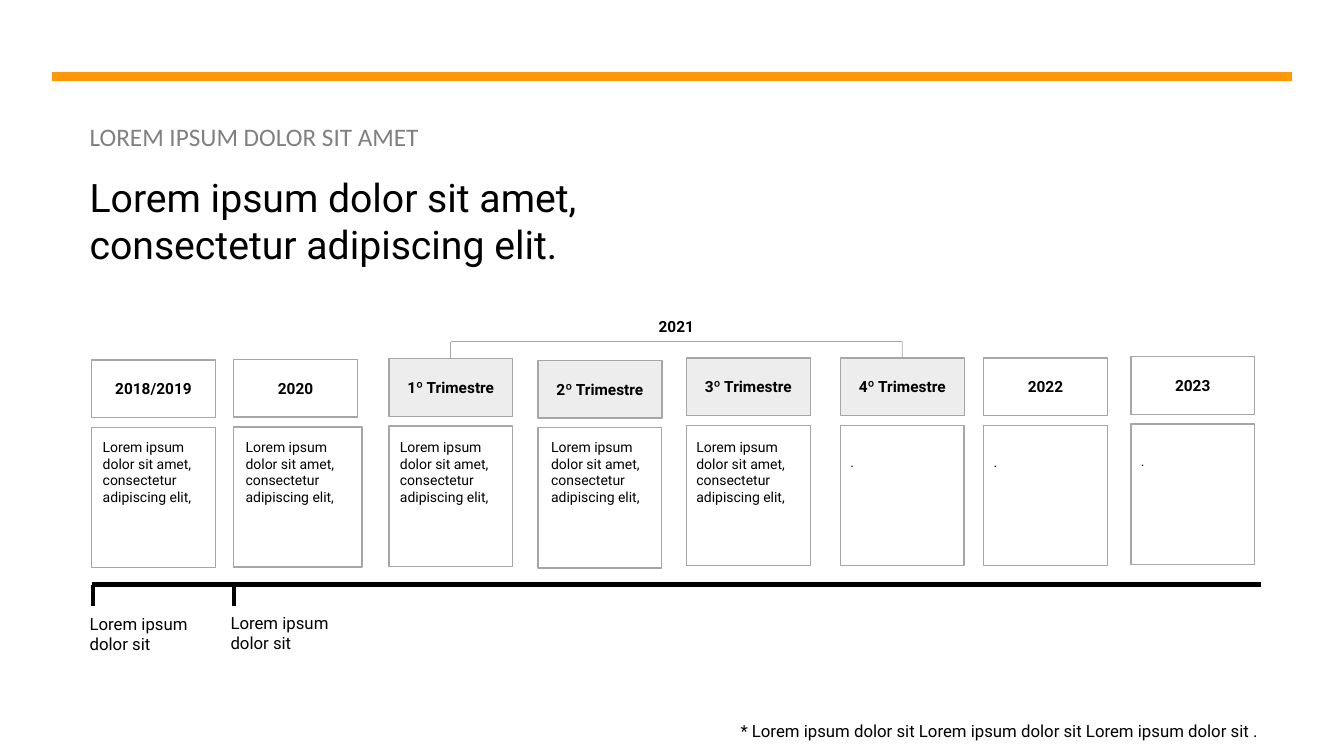
from dataclasses import dataclass

from lxml.etree import SubElement
from pptx import Presentation
from pptx.dml.color import RGBColor
from pptx.enum.shapes import MSO_CONNECTOR, MSO_SHAPE
from pptx.enum.text import MSO_ANCHOR, MSO_AUTO_SIZE, PP_ALIGN
from pptx.oxml.ns import qn
from pptx.util import Cm, Pt


@dataclass(frozen=True)
class Theme:
    accent: str = "FF9707"
    ink: str = "000000"
    muted: str = "808080"
    border: str = "A6A6A6"
    shade: str = "EDEDED"
    font: str = "Roboto"
    kicker_font: str = "Calibri"
    title: float = 28
    kicker: float = 18
    note: float = 12
    heading: float = 11
    body: float = 10


@dataclass(frozen=True)
class Period:
    label: str
    left: float
    top: float
    body: str
    shaded: bool = False
    card_width: float = 3.12
    body_shift: float = 0  # body text offset from the card's left edge


@dataclass(frozen=True)
class Milestone:
    x: float
    label_top: float


THEME = Theme()
HEAD_W, HEAD_H = 3.12, 1.45
CARD_DROP, CARD_H = 1.70, 3.53
AXIS_Y, TICK_H = 14.73, 0.54
BRACKET_Y = 8.61
BODY = "Lorem ipsum dolor sit amet, consectetur adipiscing elit,"

PERIODS = [
    Period("2018/2019", 2.31, 9.07, BODY, body_shift=0.03),
    Period("2020", 5.89, 9.06, BODY, card_width=3.23, body_shift=0.05),
    Period("1º Trimestre", 9.80, 9.04, BODY, True, body_shift=0.03),
    Period("2º Trimestre", 13.56, 9.08, BODY, True, body_shift=0.08),
    Period("3º Trimestre", 17.30, 9.02, BODY, True),
    Period("4º Trimestre", 21.18, 9.02, ".", True),
    Period("2022", 24.79, 9.02, "."),
    Period("2023", 28.50, 8.99, "."),
]
MILESTONES = [Milestone(2.34, 15.34), Milestone(5.89, 15.32)]


def rgb(value: str) -> RGBColor:
    return RGBColor.from_string(value)


def write(sp, text: str, *, size: float, font: str = THEME.font,
          color: str = THEME.ink, bold: bool = False, align=PP_ALIGN.LEFT) -> None:
    tf = sp.text_frame
    tf.word_wrap = True
    p = tf.paragraphs[0]
    p.alignment = align
    r = p.add_run()
    r.text = text
    r.font.name, r.font.size, r.font.bold = font, Pt(size), bold
    r.font.color.rgb = rgb(color)


def add_text(slide, text: str, left: float, top: float, width: float,
             height: float, **style):
    sp = slide.shapes.add_textbox(Cm(left), Cm(top), Cm(width), Cm(height))
    sp.text_frame.auto_size = MSO_AUTO_SIZE.SHAPE_TO_FIT_TEXT
    write(sp, text, **style)
    return sp


def add_box(slide, kind, left: float, top: float, width: float, height: float,
            fill: str = ""):
    sp = slide.shapes.add_shape(kind, Cm(left), Cm(top), Cm(width), Cm(height))
    sp.shadow.inherit = False
    if fill:
        sp.fill.solid()
        sp.fill.fore_color.rgb = rgb(fill)
    else:
        sp.fill.background()
    sp.line.color.rgb = rgb(THEME.border)
    sp.line.width = Pt(1)
    return sp


def add_line(slide, x1: float, y1: float, x2: float, y2: float,
             color: str, weight: float):
    line = slide.shapes.add_connector(
        MSO_CONNECTOR.STRAIGHT, Cm(x1), Cm(y1), Cm(x2), Cm(y2))
    line.line.color.rgb = rgb(color)
    line.line.width = Pt(weight)
    SubElement(line._element.spPr, qn("a:effectLst"))
    return line


def add_period(slide, period: Period):
    """Draw one column and return its heading box."""
    card_top = period.top + CARD_DROP
    add_box(slide, MSO_SHAPE.RECTANGLE, period.left, card_top,
            period.card_width, CARD_H)
    head = add_box(slide, MSO_SHAPE.ROUNDED_RECTANGLE, period.left, period.top,
                   HEAD_W, HEAD_H, THEME.shade if period.shaded else "")
    head.adjustments[0] = 0
    head.text_frame.vertical_anchor = MSO_ANCHOR.MIDDLE
    write(head, period.label, size=THEME.heading, bold=True,
          align=PP_ALIGN.CENTER)
    body_top, body_h = (10.92, 1.96) if period.body == BODY else (card_top + 0.58, 0.69)
    add_text(slide, period.body, period.left + period.body_shift, body_top,
             HEAD_W, body_h, size=THEME.body)
    return head


def add_year_bracket(slide, first, last) -> None:
    """Join the first and last quarter headings under the year label."""
    ends = [(head.left + head.width // 2).cm if hasattr(head.left + head.width // 2, "cm")
            else (head.left + head.width / 2) / Cm(1) for head in (first, last)]
    for x, head in zip(ends, (first, last)):
        stem = add_line(slide, x, head.top.cm, x, BRACKET_Y, THEME.border, 0.5)
        stem.begin_connect(head, 0)
    add_line(slide, ends[0], BRACKET_Y, ends[1], BRACKET_Y, THEME.border, 0.5)
    add_text(slide, "2021", 16.03, 7.87, 2.03, 0.73, size=THEME.heading,
             bold=True, align=PP_ALIGN.CENTER)


def main() -> None:
    prs = Presentation()
    prs.slide_width, prs.slide_height = Cm(33.87), Cm(19.05)
    slide = prs.slides.add_slide(prs.slide_layouts[6])

    # Top rule and titles
    add_line(slide, 32.56, 1.93, 1.30, 1.93, THEME.accent, 6)
    add_text(slide, "LOREM IPSUM DOLOR SIT AMET", 2.01, 2.92, 14.91, 1.02,
             size=THEME.kicker, font=THEME.kicker_font, color=THEME.muted)
    add_text(slide, "Lorem ipsum dolor sit amet, consectetur adipiscing elit.",
             2.01, 4.24, 15.62, 2.64, size=THEME.title)

    # Period columns and the bracket over the quarters
    heads = [add_period(slide, period) for period in PERIODS]
    quarters = [h for h, period in zip(heads, PERIODS) if period.shaded]
    add_year_bracket(slide, quarters[0], quarters[-1])

    # Time axis with milestones
    add_line(slide, 31.78, AXIS_Y, 2.31, AXIS_Y, THEME.ink, 3)
    for stone in MILESTONES:
        add_line(slide, stone.x, AXIS_Y, stone.x, AXIS_Y + TICK_H, THEME.ink, 3)
        add_text(slide, "Lorem ipsum dolor sit", stone.x - 0.33, stone.label_top,
                 HEAD_W, 1.27, size=THEME.note)

    # Footnote
    add_text(slide,
             "* Lorem ipsum dolor sit Lorem ipsum dolor sit Lorem ipsum dolor sit .",
             17.63, 18.03, 14.33, 0.76, size=THEME.note, align=PP_ALIGN.RIGHT)

    prs.save("out.pptx")


if __name__ == "__main__":
    main()
